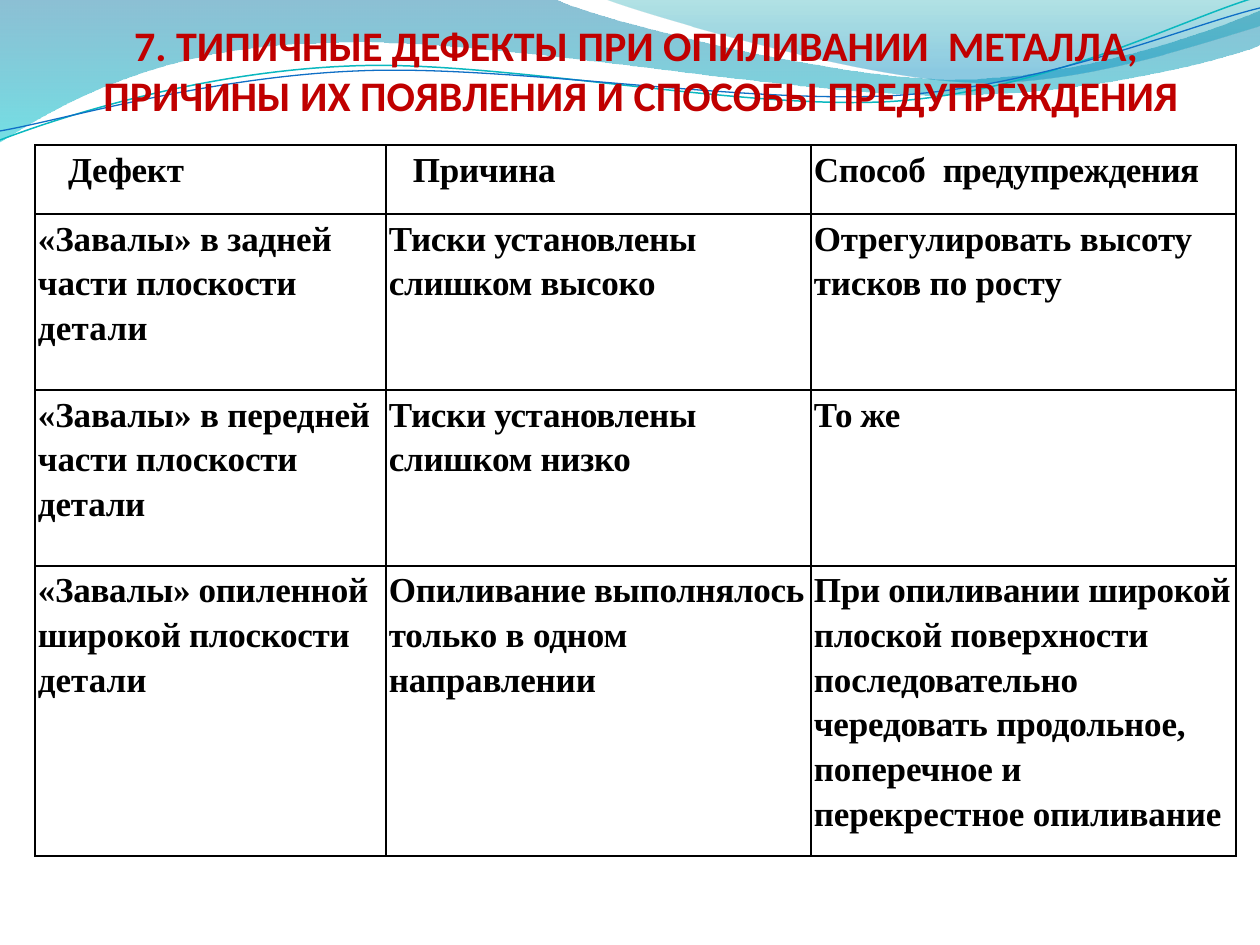
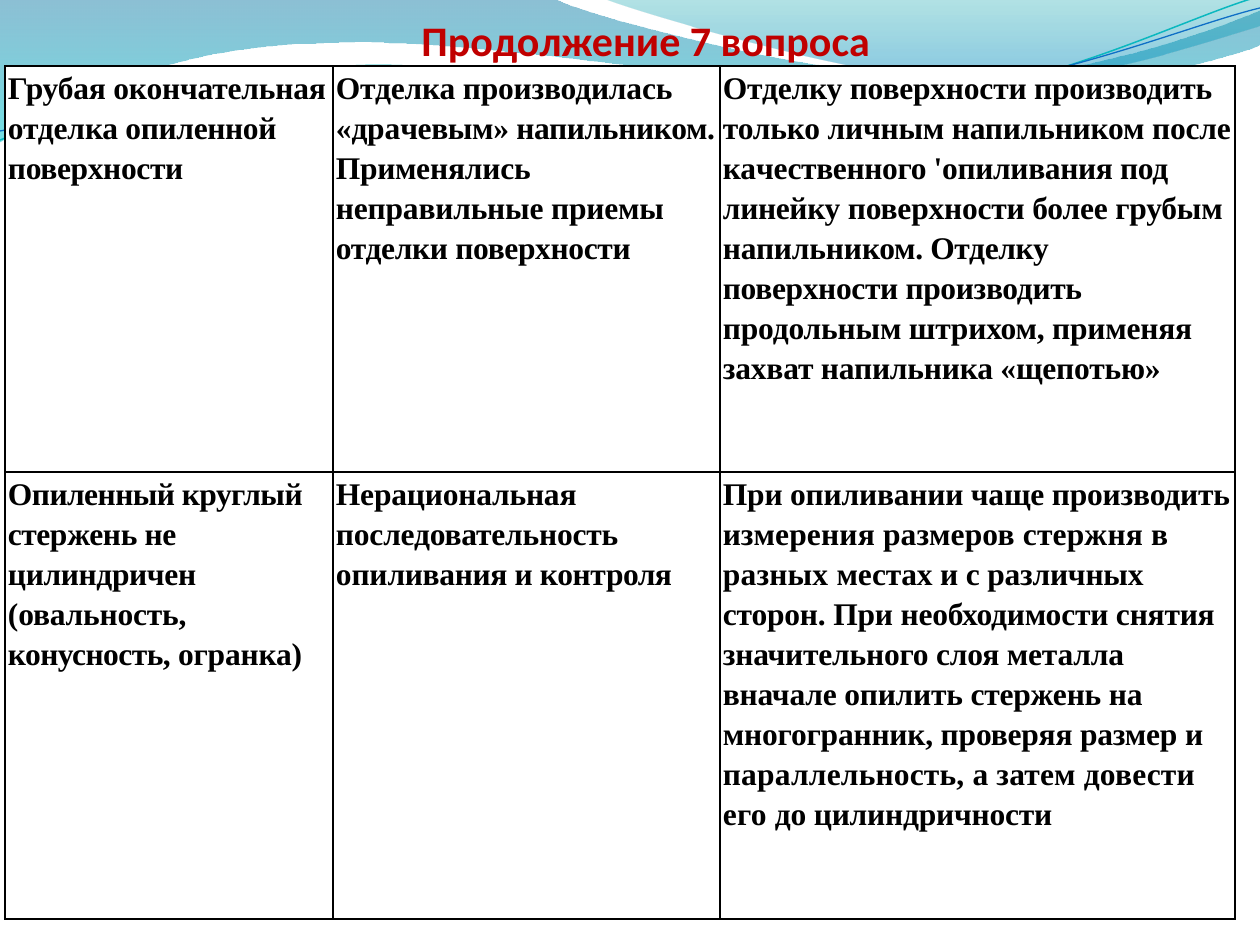
from lxml import etree
from pptx import Presentation
from pptx.dml.color import RGBColor
from pptx.enum import text
from pptx.oxml import ns
from pptx.util import Emu, Pt

PX = 914400 / 126
SLIDE_W, SLIDE_H = 1260, 945
INSET_LEFT, INSET_RIGHT = 3, 4

WHITE = RGBColor(0xFF, 0xFF, 0xFF)
BLACK = RGBColor(0x00, 0x00, 0x00)
TITLE_RED = RGBColor(0xC0, 0x00, 0x00)
DEEP_BLUE = RGBColor(0x00, 0x74, 0xA1)
CYAN = RGBColor(0x00, 0xC6, 0xCF)
TEAL = RGBColor(0x00, 0xA1, 0xA9)
SEA_BLUE = RGBColor(0x00, 0x8B, 0xBF)
LINE_TEAL = RGBColor(0x0A, 0xB8, 0xBF)
LINE_BLUE = RGBColor(0x0F, 0x6F, 0xC6)

TITLE_FONT = {"name": "Calibri", "size": Pt(24), "bold": True}
CELL_FONT = {"name": "Times New Roman", "bold": True}

BANDS = [
    ([[(0, 0)], [(554, -1)],
      [(600, 21), (837, 79), (955, 79)], [(1075, 79), (1207, 33), (1260, 11)],
      [(1261, 45)],
      [(1239, 55), (1096, 96), (940, 95)], [(784, 95), (481, 35), (324, 43)],
      [(163, 45), (58, 105), (-1, 142)]],
     [(0, DEEP_BLUE, 45), (1, CYAN, 55)]),
    ([[(604, -1)],
      [(641, 14), (859, 78), (969, 82)], [(1079, 87), (1211, 40), (1260, 26)],
      [(1260, 0)]],
     [(0, TEAL, 30), (0.8, SEA_BLUE, 45)]),
]
WAVE_LINES = [
    ([[(0, 140)],
      [(60, 117), (199, 72), (349, 66)], [(498, 59), (747, 112), (898, 101)],
      [(1050, 89), (1182, 19), (1257, -3)]], LINE_TEAL, 0.85),
    ([[(0, 131)],
      [(59, 121), (207, 77), (357, 71)], [(508, 64), (752, 106), (903, 95)],
      [(1053, 84), (1186, 26), (1260, 8)]], LINE_BLUE, 0.75),
]

DEFECTS = [
    [[("Дефект", -20)],
     [("Причина", -20)],
     [("Способ  ", -20), ("предупреждения", -30)]],
    [[("«Завалы» в задней части ", -10), ("плоскости ", -20), ("детали", 10)],
     [("Тиски установлены слишком высоко", -20)],
     [("Отрегулировать высоту тисков по росту", -10)]],
    [[("«Завалы» в передней части плоскости дета", -10), ("ли", -30)],
     [("Тиски установлены слишком низко", -20)],
     [("То же", -30)]],
    [[("«Завалы» опи", -20), ("ленной широ", -10), ("кой плоскости ", -20), ("детали", 0)],
     [("Опиливание выполнялось ", -20), ("только в одном направлении", -10)],
     [("При опиливании широкой плоской по", -20),
      ("верхности последовательно чередовать продольное, поперечное и "
       "перекрестное опиливание", -10)]],
]
MORE_DEFECTS = [
    [[("Грубая окончательная отдел", -10), ("ка опиленной поверхности", -20)],
     [("Отделка производилась «дра", -10), ("чевым» напильником. Приме", -20),
      ("нялись неправильные прие", -10), ("мы отделки поверхности", -20)],
     [("Отделку поверхности производить только личным напильником после ка", -10),
      ("чественного 'опиливания под линейку ", -20),
      ("поверхности более грубым напильни", -10),
      ("ком. Отделку поверхности производить ", -20),
      ("продольным штрихом, применяя захват напильника «щепотью»", -10)]],
    [[("Опиленный круглый стер", -30), ("жень не цилиндричен ", -20),
      ("(овальность, ", -10), ("конусность, ", -30), ("огранка)", -10)],
     [("Нерациональная последовательность опи", -10), ("ливания и конт", -20),
      ("роля", -30)],
     [("При опиливании чаще производить из", -10),
      ("мерения размеров стержня в разных ", 10),
      ("местах и с различных сторон. При необходимости снятия значительного слоя "
       "металла вначале опилить стержень на многогранник, проверяя размер и ", -10),
      ("параллельность, а затем довести его ", 10), ("до цилиндричности", -10)]],
]


def px(n):
    """Turn px into EMU."""
    return Emu(round(n * PX))


def apply(obj, values):
    """Set every attribute named in a dict of format values."""
    for name, value in values.items():
        setattr(obj, name, value)


def add_curve(s, segments, close):
    """Draw a freeform; one-point segments are lines, three-point ones Bézier curves."""
    points = [(px(x), px(y)) for segment in segments for x, y in segment]
    builder = s.shapes.build_freeform(*points[0])
    builder.add_line_segments(points[1:], close=close)
    sp = builder.convert_to_shape()
    sp.shadow.inherit = False
    steps = iter(list(sp._element.iter(ns.qn("a:lnTo"))))
    for segment in segments[1:]:
        first, *rest = [next(steps) for _ in segment]
        if rest:
            first.tag = ns.qn("a:cubicBezTo")
        for step in rest:
            first.append(step[0])
            step.getparent().remove(step)
    return sp


def add_waves(s):
    """Draw the translucent bands and thin wave lines across the top."""
    for segments, stops in BANDS:
        sp = add_curve(s, segments, True)
        sp.line.fill.background()
        sp.fill.gradient()
        sp.fill.gradient_angle = 270
        for stop, (position, color, alpha) in zip(sp.fill.gradient_stops, stops):
            stop.position = position
            stop.color.rgb = color
            etree.SubElement(stop._gs[0], ns.qn("a:alpha"), val=str(alpha * 1000))
    for segments, color, width in WAVE_LINES:
        sp = add_curve(s, segments, False)
        sp.fill.background()
        sp.line.color.rgb = color
        sp.line.width = Pt(width)


def add_title(s, box, title):
    """Write the centred red title at the bottom of its box."""
    tf = s.shapes.add_textbox(*map(px, box)).text_frame
    apply(tf, {"word_wrap": True, "vertical_anchor": text.MSO_ANCHOR.BOTTOM,
               "margin_left": 0, "margin_right": 0, "margin_top": px(6),
               "margin_bottom": 0})
    p = tf.paragraphs[0]
    p.alignment = text.PP_ALIGN.CENTER
    r = p.add_run()
    r.text = title
    apply(r.font, TITLE_FONT)
    r.font.color.rgb = TITLE_RED


def add_borders(cell):
    """Give a cell black one-point borders on all sides."""
    tc_pr = cell._tc.get_or_add_tcPr()
    for side in ("lnL", "lnR", "lnT", "lnB"):
        ln = etree.SubElement(tc_pr, ns.qn("a:" + side), w=str(Pt(1)))
        fill = etree.SubElement(ln, ns.qn("a:solidFill"))
        etree.SubElement(fill, ns.qn("a:srgbClr"), val=str(BLACK))


def fill_cell(cell, runs, size, indent):
    """Format a cell and write its runs, given as text and spacing in 1/100 pt."""
    add_borders(cell)
    cell.fill.solid()
    cell.fill.fore_color.rgb = WHITE
    apply(cell, {"margin_left": px(INSET_LEFT + indent), "margin_right": px(INSET_RIGHT),
                 "margin_top": 0, "margin_bottom": 0})
    p = cell.text_frame.paragraphs[0]
    p.line_spacing = 1.15
    for words, spacing in runs:
        r = p.add_run()
        r.text = words
        apply(r.font, {**CELL_FONT, "size": Pt(size)})
        r.font.color.rgb = BLACK
        r.font._element.set("spc", str(spacing))


def add_defect_table(s, box, widths, heights, rows, size, indents):
    """Place a table of defects in a box; indents maps (row, column) to px."""
    frame = s.shapes.add_table(len(heights), len(widths), *map(px, box))
    table = frame.table
    apply(table, {"first_row": False, "horz_banding": False})
    for column, width in zip(table.columns, widths):
        column.width = px(width)
    for row, height in zip(table.rows, heights):
        row.height = px(height)
    frame.height = px(box[3])
    for i, row in enumerate(rows):
        for j, runs in enumerate(row):
            fill_cell(table.cell(i, j), runs, size, indents.get((i, j), 0))


def add_defect_slide(prs, title, title_box, **table):
    """Add a slide with waves, a title and a table of defects."""
    s = prs.slides.add_slide(prs.slide_layouts[6])
    add_waves(s)
    add_title(s, title_box, title)
    add_defect_table(s, **table)


def main():
    """Build both slides and save them."""
    prs = Presentation()
    apply(prs, {"slide_width": px(SLIDE_W), "slide_height": px(SLIDE_H)})
    add_defect_slide(
        prs, "7. ТИПИЧНЫЕ ДЕФЕКТЫ ПРИ ОПИЛИВАНИИ  МЕТАЛЛА,  "
             "ПРИЧИНЫ ИХ ПОЯВЛЕНИЯ И СПОСОБЫ ПРЕДУПРЕЖДЕНИЯ",
        (74, 26, 1134, 94), box=(35, 145, 1201, 711), widths=(351, 425, 425),
        heights=(69, 176, 176, 276), rows=DEFECTS, size=20,
        indents={(0, 0): 30, (0, 1): 24})
    add_defect_slide(
        prs, " Продолжение 7 вопроса",
        (74, 26, 1134, 39), box=(5, 66, 1230, 853), widths=(328, 387, 515),
        heights=(406, 447), rows=MORE_DEFECTS, size=18, indents={})
    prs.save("out.pptx")


if __name__ == "__main__":
    main()
